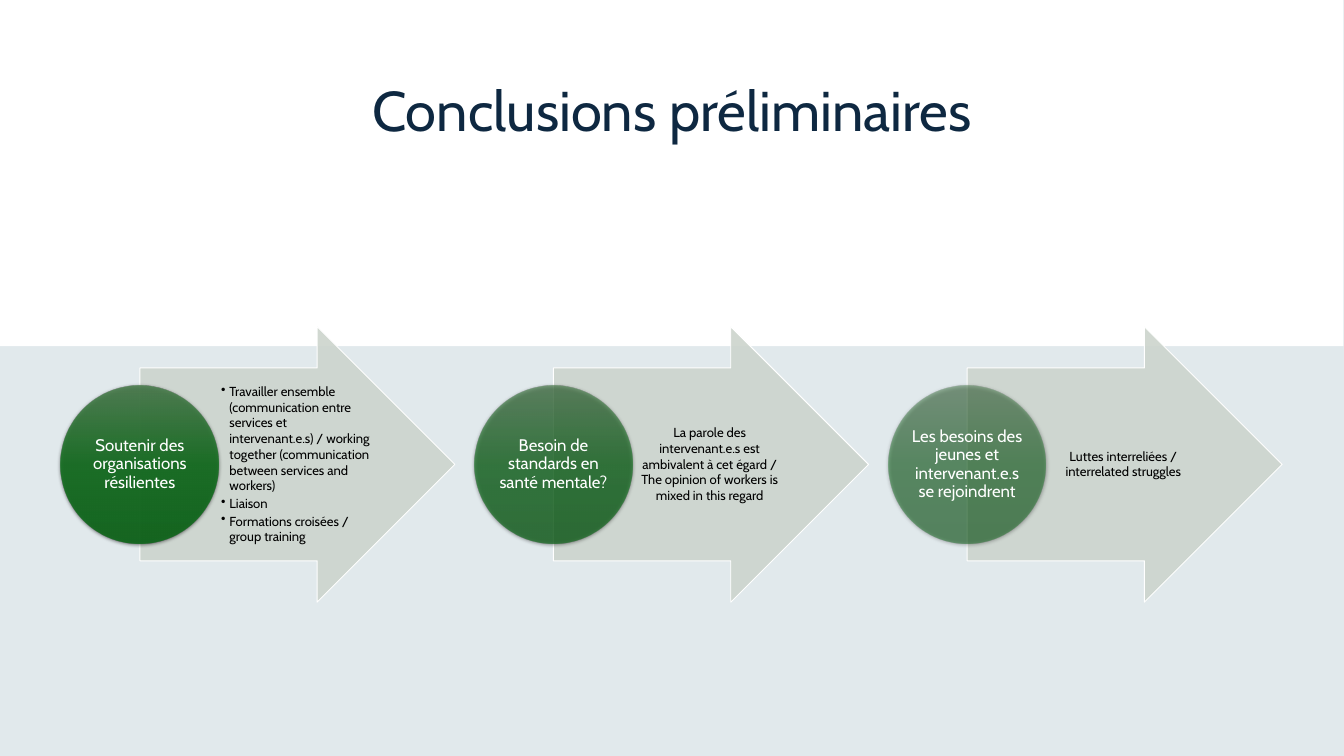
from pptx import Presentation
from pptx import util as u
from pptx.dml.color import RGBColor
from pptx.enum import shapes, text
from pptx.oxml import parse_xml
from pptx.oxml.ns import nsdecls, qn

FONT = "Cabin"
PITCH = 443.2  # distance between two steps
GRADIENT = [(0, "4D7E50"), (50, "156F21"), (100, "0F661B")]

# Circle label, circle opacity in percent, arrow paragraphs
STEPS = [
    ("Soutenir des organisations résilientes", 90,
     ["Travailler ensemble (communication entre services et intervenant.e.s) / "
      "working together (communication between services and workers)",
      "Liaison",
      "Formations croisées / group training"]),
    ("Besoin de standards en santé mentale?", 70,
     ["La parole des intervenant.e.s est ambivalent à cet égard / "
      "The opinion of workers is mixed in this regard"]),
    ("Les besoins des jeunes et intervenant.e.s se rejoindrent", 50,
     ["Luttes interreliées / interrelated struggles"]),
]


def rgb(color):
    return RGBColor.from_string(color)


def add_shape(s, kind, box, fill=None, alpha=100, line=None):
    sp = s.shapes.add_shape(kind, *[u.Pt(v) for v in box])
    sp.shadow.inherit = False
    if fill:
        sp.fill.solid()
        sp.fill.fore_color.rgb = rgb(fill)
        if alpha < 100:
            clr = sp._element.spPr.find(".//" + qn("a:srgbClr"))
            clr.append(parse_xml(f'<a:alpha {nsdecls("a")} val="{alpha * 1000}"/>'))
    else:
        sp.fill.background()
    if line:
        sp.line.color.rgb = rgb(line)
        sp.line.width = u.Pt(1)
    else:
        sp.line.fill.background()
    return sp


def add_text(s, box, lines, size, color, insets, spacing=1.0, after=0, bullets=False):
    tf = s.shapes.add_textbox(*[u.Pt(v) for v in box]).text_frame
    tf.word_wrap = True
    tf.vertical_anchor = text.MSO_ANCHOR.MIDDLE
    tf.margin_left, tf.margin_top, tf.margin_right, tf.margin_bottom = map(u.Pt, insets)
    tf.text = "\n".join(lines)
    for p in tf.paragraphs:
        p.alignment = text.PP_ALIGN.LEFT if bullets else text.PP_ALIGN.CENTER
        p.line_spacing = spacing
        p.space_after = u.Pt(after)
        if bullets:
            add_bullet(p)
        for r in p.runs:
            r.font.name = FONT
            r.font.size = u.Pt(size)
            r.font.color.rgb = rgb(color)


def add_bullet(p):
    pPr = p._p.get_or_add_pPr()
    pPr.set("marL", str(u.Pt(9)))
    pPr.set("indent", str(u.Pt(-9)))
    pPr.append(parse_xml(f'<a:buChar {nsdecls("a")} char="•"/>'))


def add_circle(s, box, alpha):
    sp = add_shape(s, shapes.MSO_SHAPE.OVAL, box)
    spPr = sp._element.spPr
    # Vertical gradient
    stops = "".join(
        f'<a:gs pos="{pos * 1000}"><a:srgbClr val="{color}">'
        f'<a:alpha val="{alpha * 1000}"/></a:srgbClr></a:gs>'
        for pos, color in GRADIENT)
    spPr.replace(spPr.find(qn("a:noFill")), parse_xml(
        f'<a:gradFill {nsdecls("a")} rotWithShape="1"><a:gsLst>{stops}</a:gsLst>'
        '<a:lin ang="5400000" scaled="0"/></a:gradFill>'))
    # Soft shadow below
    spPr.find(qn("a:effectLst")).append(parse_xml(
        f'<a:outerShdw {nsdecls("a")} blurRad="{u.Pt(4.5)}" dist="{u.Pt(1.5)}" '
        'dir="5400000" algn="ctr" rotWithShape="0"><a:srgbClr val="000000">'
        '<a:alpha val="63000"/></a:srgbClr></a:outerShdw>'))


def add_step(s, x, label, alpha, lines):
    arrow = add_shape(s, shapes.MSO_SHAPE.RIGHT_ARROW, (x + 84.5, 350, 337.6, 295.2),
                      "CCD4CD", 90, "FFFFFF")
    arrow.adjustments[0] = 0.7
    arrow.adjustments[1] = 0.5
    bullets = len(lines) > 1
    add_text(s, (x + 168.8, 393.8, 164.9, 206.6), lines, 14, "000000",
             (2.7, 0.7, 1.4, 0.7), after=2.1 if bullets else 4.9, bullets=bullets)
    add_circle(s, (x, 413.2, 169, 169), alpha)
    add_text(s, (x + 24.7, 437.9, 119.6, 119.6), [label], 18, "FFFFFF",
             (0.7, 0.7, 0.7, 0.7), spacing=0.9, after=6.3)


def main():
    prs = Presentation()
    prs.slide_width, prs.slide_height = u.Pt(1440), u.Pt(810)
    s = prs.slides.add_slide(prs.slide_layouts[6])

    # Tinted backdrop with a white upper band
    rect = shapes.MSO_SHAPE.RECTANGLE
    add_shape(s, rect, (0, 0, 1440, 810), "F2F2F2")
    add_shape(s, rect, (0, 0, 1440, 810), "0B76A0", 7)
    add_shape(s, rect, (0, 0, 1439.3, 370.8), "FFFFFF")

    # Title
    add_text(s, (64.8, 43.2, 1310, 156.2), ["Conclusions préliminaires"], 60, "0E2841",
             (7.2, 3.6, 7.2, 3.6), spacing=0.9, after=6)

    # Three steps
    for i, (label, alpha, lines) in enumerate(STEPS):
        add_step(s, 65.3 + i * PITCH, label, alpha, lines)

    prs.save("out.pptx")


if __name__ == "__main__":
    main()
